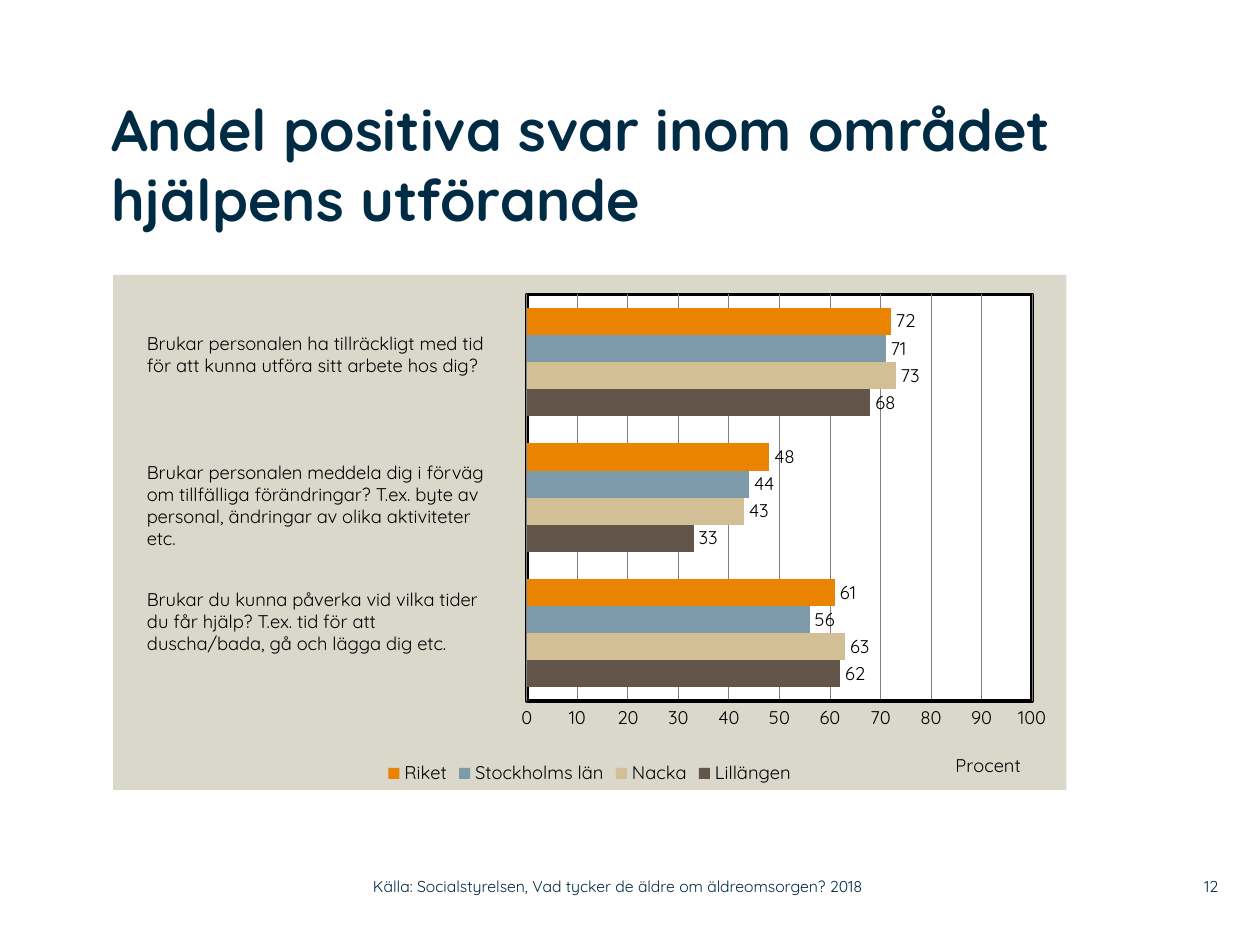
from lxml import etree
from pptx import Presentation
from pptx import util as u
from pptx.chart.data import CategoryChartData
from pptx.dml.color import RGBColor
from pptx.enum import chart as c
from pptx.enum import text as t
from pptx.oxml import parse_xml
from pptx.oxml.ns import nsdecls, qn

NAVY = RGBColor(0x00, 0x2B, 0x45)
BLACK = RGBColor(0, 0, 0)
WHITE = RGBColor(0xFF, 0xFF, 0xFF)
GREY = RGBColor(0x80, 0x80, 0x80)
PANEL = RGBColor(0xDA, 0xD7, 0xCB)
BROWN = RGBColor(0x63, 0x55, 0x49)
SAND = RGBColor(0xD3, 0xBF, 0x96)
BLUE = RGBColor(0x7D, 0x9A, 0xAA)
ORANGE = RGBColor(0xE9, 0x83, 0x00)
FONT = "Quicksand"

# Content
TITLE = "Andel positiva svar inom området hjälpens utförande"
QUESTIONS = [  # top and height in cm, then lines
    (6.58, 1.14, ["Brukar personalen ha tillräckligt med tid",
                  "för att kunna utföra sitt arbete hos dig?"]),
    (9.17, 2.06, ["Brukar personalen meddela dig i förväg om tillfälliga förändringar? "
                  "T.ex. byte av personal, ändringar av olika aktiviteter etc."]),
    (11.73, 1.6, ["Brukar du kunna påverka vid vilka tider",
                  "du får hjälp? T.ex. tid för att",
                  "duscha/bada, gå och lägga dig etc."]),
]
CATEGORIES = ["1", "2", "3"]
SERIES = [
    ("Lillängen", (62, 33, 68), BROWN),
    ("Nacka", (63, 43, 73), SAND),
    ("Stockholms län", (56, 44, 71), BLUE),
    ("Riket", (61, 48, 72), ORANGE),
]
FOOTERS = [  # left and width in cm, text, alignment
    (23.37, 1.19, "12", t.PP_ALIGN.RIGHT),
    (7.52, 11.25, "Källa: Socialstyrelsen, Vad tycker de äldre om äldreomsorgen? 2018",
     t.PP_ALIGN.LEFT),
]


def set_all(target, **values):
    for name, value in values.items():
        setattr(target, name, value)


def style_font(font, size, color, bold=False):
    set_all(font, name=FONT, size=u.Pt(size), bold=bold)
    font.color.rgb = color


def write(box, lines, size, color, bold=False, align=t.PP_ALIGN.LEFT, **frame_values):
    frame = box.text_frame
    set_all(frame, word_wrap=True, **frame_values)
    for index, line in enumerate(lines):
        para = frame.paragraphs[0] if index == 0 else frame.add_paragraph()
        para.alignment = align
        span = para.add_run()
        span.text = line
        style_font(span.font, size, color, bold)


def fill(format_, color):
    format_.fill.solid()
    format_.fill.fore_color.rgb = color


def shape_format(xml_parent, color, before=None):
    """Solid fill for chart parts without a format object."""
    props = parse_xml(f'<c:spPr {nsdecls("c", "a")}><a:solidFill><a:srgbClr val="{color}"/>'
                      '</a:solidFill><a:ln><a:noFill/></a:ln></c:spPr>')
    if before is None:
        xml_parent.append(props)
    else:
        before.addprevious(props)
    return props


def manual_layout(parent, position, **values):
    for old in parent.findall(qn("c:layout")):
        parent.remove(old)
    layout = etree.Element(qn("c:layout"))
    manual = etree.SubElement(layout, qn("c:manualLayout"))
    for name, value in values.items():
        etree.SubElement(manual, qn(f"c:{name}")).set("val", str(value))
    parent.insert(position, layout)


def add_bars(page):
    data = CategoryChartData()
    data.categories = CATEGORIES
    for name, values, _ in SERIES:
        data.add_series(name, values)
    frame = page.shapes.add_chart(c.XL_CHART_TYPE.BAR_CLUSTERED, u.Cm(2.28), u.Cm(5.54),
                                  u.Cm(19.22), u.Cm(10.39), data)
    chart = frame.chart
    style_font(chart.font, 10.5, BLACK)
    set_all(chart, has_title=False, has_legend=True)
    set_all(chart.legend, position=c.XL_LEGEND_POSITION.BOTTOM, include_in_layout=False)
    style_font(chart.legend.font, 10.5, BLACK)

    # Bars and their values
    plot = chart.plots[0]
    set_all(plot, gap_width=100, overlap=0, vary_by_categories=False)
    for series, (_, _, color) in zip(plot.series, SERIES):
        fill(series.format, color)
        labels = series.data_labels
        set_all(labels, show_value=True, position=c.XL_LABEL_POSITION.OUTSIDE_END)
        style_font(labels.font, 10.5, BLACK)

    # Axes
    chart.category_axis.visible = False
    axis = chart.value_axis
    set_all(axis, minimum_scale=0, maximum_scale=100, major_unit=10,
            has_major_gridlines=True, major_tick_mark=c.XL_TICK_MARK.NONE)
    style_font(axis.tick_labels.font, 10.5, BLACK)
    for line, color, width in ((axis.format.line, BLACK, 2),
                               (axis.major_gridlines.format.line, GREY, 0.5)):
        line.color.rgb = color
        line.width = u.Pt(width)
    span = axis.axis_title.text_frame.paragraphs[0].add_run()
    span.text = "Procent"
    style_font(span.font, 10.5, BLACK)
    manual_layout(axis.axis_title._element, 1, xMode="edge", yMode="edge", x=0.88, y=0.92)

    # Panel and framed plot area
    space = chart._chartSpace
    area = space.chart.plotArea
    manual_layout(area, 0, layoutTarget="inner", xMode="edge", yMode="edge",
                  x=0.434, y=0.038, w=0.53, h=0.789)
    border = shape_format(area, WHITE).find(qn("a:ln"))
    border.set("w", str(u.Pt(2)))
    border.remove(border[0])
    edge = etree.SubElement(border, qn("a:solidFill"))
    etree.SubElement(edge, qn("a:srgbClr")).set("val", str(BLACK))
    shape_format(space, PANEL, space.find(qn("c:txPr")))


def main():
    deck = Presentation()
    set_all(deck, slide_width=u.Cm(25.4), slide_height=u.Cm(19.05))
    page = deck.slides.add_slide(deck.slide_layouts[5])
    no_margins = dict.fromkeys(
        ("margin_left", "margin_right", "margin_top", "margin_bottom"), 0)

    add_bars(page)

    # Title
    title = page.shapes.title
    set_all(title, left=u.Cm(2.24), top=u.Cm(1.9), width=u.Cm(19.3), height=u.Cm(3.61))
    write(title, [TITLE], 33, NAVY, bold=True, auto_size=t.MSO_AUTO_SIZE.NONE,
          vertical_anchor=t.MSO_ANCHOR.TOP, **no_margins)

    # Questions beside the bars
    for top, height, lines in QUESTIONS:
        box = page.shapes.add_textbox(u.Cm(2.71), u.Cm(top), u.Cm(7.57), u.Cm(height))
        write(box, lines, 10.5, BLACK, auto_size=t.MSO_AUTO_SIZE.SHAPE_TO_FIT_TEXT)

    # Page number and source
    for left, width, line, align in FOOTERS:
        box = page.shapes.add_textbox(u.Cm(left), u.Cm(17.5), u.Cm(width), u.Cm(0.74))
        write(box, [line], 9, NAVY, align=align,
              vertical_anchor=t.MSO_ANCHOR.MIDDLE, **no_margins)

    deck.save("out.pptx")


if __name__ == "__main__":
    main()
